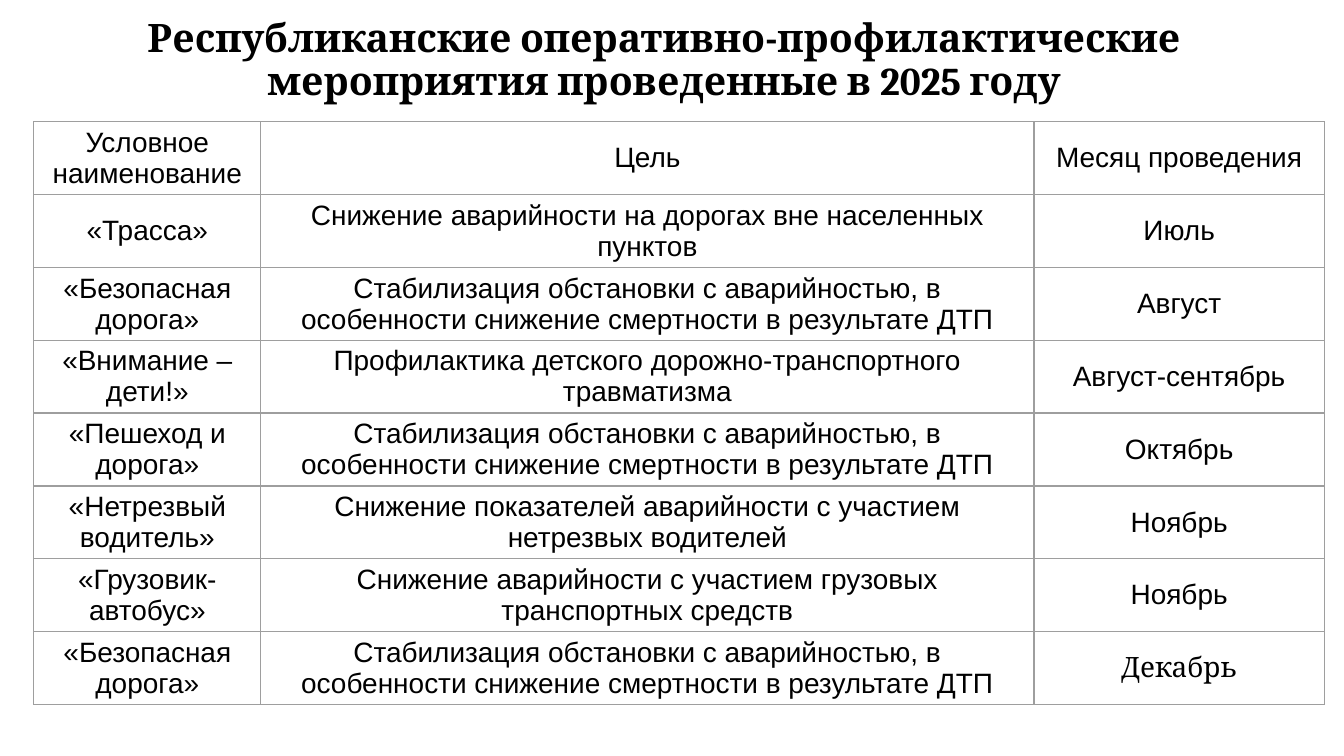
import pptx
import pptx.util
import pptx.dml.color
import pptx.enum.text
import pptx.oxml.ns
import lxml.etree

Cm = pptx.util.Cm
Pt = pptx.util.Pt
CENTER = pptx.enum.text.PP_ALIGN.CENTER
COLORS = {"text": "000000", "border": "9E9E9E"}
STABILIZATION = ("Стабилизация обстановки с аварийностью, в особенности "
                 "снижение смертности в результате ДТП")
ROWS = [
    ("Условное наименование", "Цель", "Месяц проведения"),
    ("«Трасса»", "Снижение аварийности на дорогах вне населенных пунктов", "Июль"),
    ("«Безопасная дорога»", STABILIZATION, "Август"),
    ("«Внимание – дети!»", "Профилактика детского дорожно-транспортного травматизма",
     "Август-сентябрь"),
    ("«Пешеход и дорога»", STABILIZATION, "Октябрь"),
    ("«Нетрезвый водитель»",
     "Снижение показателей аварийности с участием нетрезвых водителей", "Ноябрь"),
    ("«Грузовик-автобус»",
     "Снижение аварийности с участием грузовых\nтранспортных средств", "Ноябрь"),
    ("«Безопасная дорога»", STABILIZATION, "Декабрь"),
]
COLUMN_WIDTHS = [4.29, 14.61, 5.49]
ROW_HEIGHT = 1.37


def style_paragraph(paragraph, font_name, size, bold=False):
    paragraph.alignment = CENTER
    font = paragraph.font
    font.name = font_name
    font.size = Pt(size)
    font.bold = bold
    font.color.rgb = pptx.dml.color.RGBColor.from_string(COLORS["text"])


def add_cell_borders(cell):
    properties = cell._tc.get_or_add_tcPr()
    qn = pptx.oxml.ns.qn
    for side in ("a:lnL", "a:lnR", "a:lnT", "a:lnB"):
        line = lxml.etree.SubElement(properties, qn(side), w=str(Pt(0.75)))
        fill = lxml.etree.SubElement(line, qn("a:solidFill"))
        lxml.etree.SubElement(fill, qn("a:srgbClr"), val=COLORS["border"])


deck = pptx.Presentation()
deck.slide_width = Cm(25.4)
deck.slide_height = Cm(14.29)
page = deck.slides.add_slide(deck.slide_layouts[6])

# Schedule of campaigns
table = page.shapes.add_table(
    len(ROWS), len(COLUMN_WIDTHS), Cm(0.64), Cm(2.3),
    Cm(sum(COLUMN_WIDTHS)), Cm(ROW_HEIGHT * len(ROWS))).table
for column, width in zip(table.columns, COLUMN_WIDTHS):
    column.width = Cm(width)
for row, texts in zip(table.rows, ROWS):
    row.height = Cm(ROW_HEIGHT)
    for cell, text in zip(row.cells, texts):
        add_cell_borders(cell)
        cell.fill.background()
        cell.vertical_anchor = pptx.enum.text.MSO_ANCHOR.MIDDLE
        cell.margin_left = cell.margin_right = Cm(0.18)
        cell.margin_top = cell.margin_bottom = Cm(0.1)
        cell.text = text
        font_name = "Cambria" if text == "Декабрь" else "Arial"
        for paragraph in cell.text_frame.paragraphs:
            style_paragraph(paragraph, font_name, 15)

# Title
title_box = page.shapes.add_textbox(Cm(0.25), Cm(0.18), Cm(24.6), Cm(1.93))
frame = title_box.text_frame
frame.word_wrap = True
frame.margin_left = frame.margin_right = Cm(0.18)
frame.margin_top = frame.margin_bottom = Cm(0.18)
title = frame.paragraphs[0]
title.text = ("Республиканские оперативно-профилактические "
              "мероприятия проведенные в 2025 году")
title.line_spacing = 0.9
style_paragraph(title, "Cambria", 21, bold=True)

deck.save("out.pptx")
